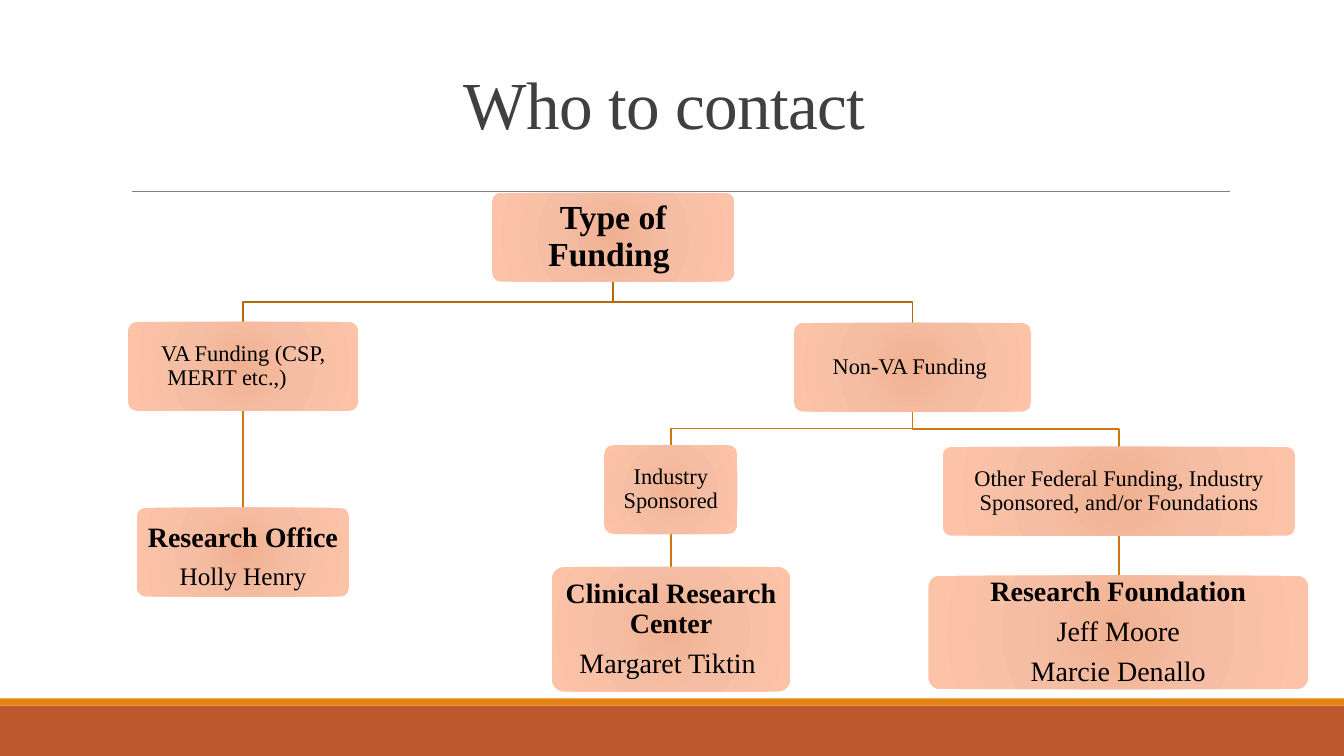
"""Build the funding contact chart slide."""
from dataclasses import dataclass

from lxml import etree
from pptx import Presentation
from pptx.dml.color import RGBColor
from pptx.enum.shapes import MSO_CONNECTOR, MSO_SHAPE
from pptx.enum.text import MSO_ANCHOR, MSO_AUTO_SIZE, PP_ALIGN
from pptx.oxml import parse_xml
from pptx.oxml.ns import qn
from pptx.util import Pt

RECTANGLE = MSO_SHAPE.RECTANGLE
ROUNDED = MSO_SHAPE.ROUNDED_RECTANGLE
STRAIGHT = MSO_CONNECTOR.STRAIGHT
MIDDLE = MSO_ANCHOR.MIDDLE
BOTTOM = MSO_ANCHOR.BOTTOM
CENTER = PP_ALIGN.CENTER
NO_AUTOFIT = MSO_AUTO_SIZE.NONE

FONT = "Times New Roman"
BLACK = RGBColor(0x00, 0x00, 0x00)
TITLE_GRAY = RGBColor(0x40, 0x40, 0x40)
RULE_GRAY = RGBColor(0x80, 0x80, 0x80)
RUST = RGBColor(0xBD, 0x58, 0x2C)
ORANGE = RGBColor(0xE4, 0x83, 0x12)
ROOT_LINK = RGBColor(0xB7, 0x69, 0x0E)
LINK = RGBColor(0xCF, 0x77, 0x10)
GRADIENT_STOPS = (
    (0, RGBColor(0xF0, 0xB1, 0x91)),
    (45, RGBColor(0xF5, 0xBE, 0xA4)),
    (100, RGBColor(0xFD, 0xC3, 0xA8)),
)
SLIDE_WIDTH, SLIDE_HEIGHT = 960, 540
PARAGRAPH_GAP = 7


@dataclass(frozen=True)
class TextRun:
    text: str
    size: float
    bold: bool = False


@dataclass(frozen=True)
class Box:
    left: float
    top: float
    width: float
    height: float
    paragraphs: tuple[tuple[TextRun, ...], ...]
    inset: float = 7
    extra_top: float = 0

    @property
    def center(self) -> float:
        return self.left + self.width / 2

    @property
    def bottom(self) -> float:
        return self.top + self.height


@dataclass(frozen=True)
class Link:
    parent: Box
    child: Box
    color: RGBColor = LINK


@dataclass(frozen=True)
class Bar:
    top: float
    height: float
    color: RGBColor


ROOT = Box(351.5, 137.7, 173, 63.5, ((TextRun("Type of Funding ", 24, True),),), inset=9)
VA = Box(91.4, 230, 164.5, 63.5, (
    (TextRun("VA Funding (CSP, MERIT etc.,)", 16), TextRun("\t", 14)),))
NON_VA = Box(567.2, 230.6, 169.2, 63.5, ((TextRun("Non-VA Funding ", 16),),))
INDUSTRY = Box(431.6, 318, 95.2, 63.5, ((TextRun("Industry Sponsored", 16),),))
OTHER = Box(673.4, 319.2, 251.8, 63.5, (
    (TextRun("Other Federal Funding, Industry Sponsored, and/or Foundations", 16),),))
OFFICE = Box(97.7, 362.7, 151.7, 63.5, (
    (TextRun("Research Office", 20, True),),
    (TextRun("Holly Henry", 18),)), inset=4, extra_top=7)
CENTER_BOX = Box(394.1, 405, 170.5, 89, (
    (TextRun("Clinical Research Center", 20, True),),
    (TextRun("Margaret Tiktin ", 20),)))
FOUNDATION = Box(663.2, 411.2, 271.3, 81, (
    (TextRun("Research Foundation", 20, True),),
    (TextRun("Jeff Moore", 20),),
    (TextRun("Marcie Denallo", 20),)))

BOXES = (ROOT, VA, NON_VA, INDUSTRY, OTHER, OFFICE, CENTER_BOX, FOUNDATION)
LINKS = (
    Link(ROOT, VA, ROOT_LINK), Link(ROOT, NON_VA, ROOT_LINK), Link(VA, OFFICE),
    Link(NON_VA, INDUSTRY), Link(NON_VA, OTHER),
    Link(INDUSTRY, CENTER_BOX), Link(OTHER, FOUNDATION),
)
BARS = (Bar(504, 36, RUST), Bar(498.8, 5.2, ORANGE))


def add_run(paragraph, text_run: TextRun, color: RGBColor):
    run = paragraph.add_run()
    run.text = text_run.text
    run.font.name = FONT
    run.font.size = Pt(text_run.size)
    run.font.bold = text_run.bold
    run.font.color.rgb = color
    return run


def add_bar(slide, bar: Bar) -> None:
    shape = slide.shapes.add_shape(
        RECTANGLE, Pt(0), Pt(bar.top), Pt(SLIDE_WIDTH), Pt(bar.height))
    shape.shadow.inherit = False
    shape.fill.solid()
    shape.fill.fore_color.rgb = bar.color
    shape.line.fill.background()


def add_line(slide, start: tuple[float, float], end: tuple[float, float],
             color: RGBColor, width: float) -> None:
    connector = slide.shapes.add_connector(
        STRAIGHT, *(Pt(value) for value in (*start, *end)))
    connector.line.color.rgb = color
    connector.line.width = Pt(width)
    etree.SubElement(connector._element.spPr, qn("a:effectLst"))


def add_link(slide, link: Link) -> None:
    start = (link.parent.center, link.parent.bottom)
    end = (link.child.center, link.child.top)
    if abs(start[0] - end[0]) < 1:
        add_line(slide, start, (start[0], end[1]), link.color, 1.25)
        return
    middle = (start[1] + end[1]) / 2
    corners = ((start[0], middle), (end[0], middle), end)
    builder = slide.shapes.build_freeform(Pt(start[0]), Pt(start[1]))
    builder.add_line_segments([(Pt(x), Pt(y)) for x, y in corners], close=False)
    shape = builder.convert_to_shape()
    shape.shadow.inherit = False
    shape.fill.background()
    shape.line.color.rgb = link.color
    shape.line.width = Pt(1.25)


def set_radial_fill(shape) -> None:
    stops = "".join(
        f'<a:gs pos="{position * 1000}"><a:srgbClr val="{color}"/></a:gs>'
        for position, color in GRADIENT_STOPS)
    gradient = parse_xml(
        '<a:gradFill xmlns:a="http://schemas.openxmlformats.org/drawingml/2006/main" '
        f'rotWithShape="1"><a:gsLst>{stops}</a:gsLst><a:path path="circle">'
        '<a:fillToRect l="100000" t="100000" r="100000" b="100000"/></a:path></a:gradFill>')
    shape._element.spPr.find(qn("a:prstGeom")).addnext(gradient)


def add_box(slide, box: Box) -> None:
    shape = slide.shapes.add_shape(
        ROUNDED, Pt(box.left), Pt(box.top), Pt(box.width), Pt(box.height))
    shape.adjustments[0] = 0.1
    shape.shadow.inherit = False
    shape.line.fill.background()
    set_radial_fill(shape)
    frame = shape.text_frame
    frame.word_wrap = True
    frame.vertical_anchor = MIDDLE
    frame.margin_left = frame.margin_right = frame.margin_bottom = Pt(box.inset)
    frame.margin_top = Pt(box.inset + box.extra_top)
    for index, text_runs in enumerate(box.paragraphs):
        paragraph = frame.add_paragraph() if index else frame.paragraphs[0]
        paragraph.alignment = CENTER
        paragraph.line_spacing = 0.9
        paragraph.space_before = Pt(PARAGRAPH_GAP if index else 0)
        for text_run in text_runs:
            add_run(paragraph, text_run, BLACK)


def set_title(slide) -> None:
    title = slide.shapes.title
    title.left, title.top, title.width, title.height = Pt(78.5), Pt(0), Pt(792), Pt(105.8)
    frame = title.text_frame
    frame.auto_size = NO_AUTOFIT
    frame.word_wrap = True
    frame.vertical_anchor = BOTTOM
    paragraph = frame.paragraphs[0]
    paragraph.alignment = CENTER
    paragraph.line_spacing = 0.85
    run = add_run(paragraph, TextRun("Who to contact", 48), TITLE_GRAY)
    run._r.get_or_add_rPr().set("spc", "-50")


def main() -> None:
    presentation = Presentation()
    presentation.slide_width, presentation.slide_height = Pt(SLIDE_WIDTH), Pt(SLIDE_HEIGHT)
    slide = presentation.slides.add_slide(presentation.slide_layouts[5])
    set_title(slide)
    for bar in BARS:
        add_bar(slide, bar)
    add_line(slide, (94.3, 136.7), (878.8, 136.7), RULE_GRAY, 0.5)
    for link in LINKS:
        add_link(slide, link)
    for box in BOXES:
        add_box(slide, box)
    presentation.save("out.pptx")


if __name__ == "__main__":
    main()
